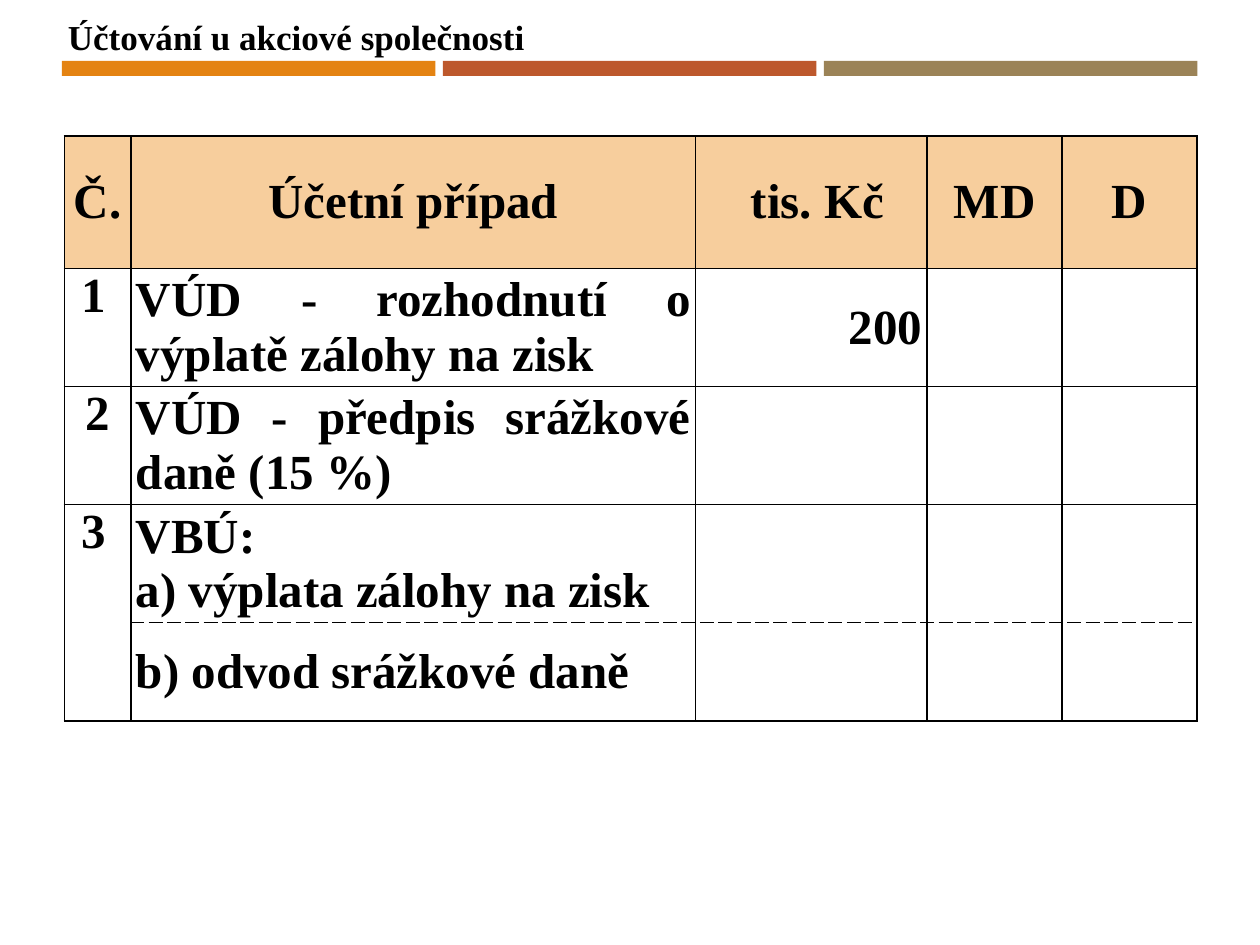
import pptx
import pptx.dml.color
import pptx.enum.shapes
import pptx.enum.text
import pptx.oxml
import pptx.oxml.ns
import pptx.util

Cm = pptx.util.Cm
Pt = pptx.util.Pt
ALIGN = pptx.enum.text.PP_ALIGN
ANCHOR = pptx.enum.text.MSO_ANCHOR

COLORS = {
    "text": "000000",
    "header": "F7CE9D",
    "orange": "E48312",
    "rust": "BD582C",
    "olive": "9B8357",
}


class Deck:
    """Style and current slide, with one method per kind of element."""

    font = "Times New Roman"

    def __init__(self, prs):
        self.s = prs.slides.add_slide(prs.slide_layouts[6])

    def rgb(self, name):
        return pptx.dml.color.RGBColor.from_string(COLORS[name])

    def run(self, p, text, size):
        r = p.add_run()
        r.text = text
        r.font.name = self.font
        r.font.size = Pt(size)
        r.font.bold = True
        r.font.color.rgb = self.rgb("text")

    def bar(self, left, top, width, height, color):
        sp = self.s.shapes.add_shape(
            pptx.enum.shapes.MSO_SHAPE.RECTANGLE, Cm(left), Cm(top), Cm(width), Cm(height))
        sp.shadow.inherit = False
        sp.fill.solid()
        sp.fill.fore_color.rgb = self.rgb(color)
        sp.line.fill.background()

    def title(self, left, top, width, height, text):
        sp = self.s.shapes.add_textbox(Cm(left), Cm(top), Cm(width), Cm(height))
        tf = sp.text_frame
        tf.word_wrap = False
        self.run(tf.paragraphs[0], text, 20)

    def table(self, left, top, cols, rows):
        sp = self.s.shapes.add_table(
            len(rows), len(cols), Cm(left), Cm(top), Cm(sum(cols)), Cm(sum(rows)))
        table = sp.table
        table.first_row = table.horz_banding = False
        for column, width in zip(table.columns, cols):
            column.width = Cm(width)
        for row, height in zip(table.rows, rows):
            row.height = Cm(height)
        return table

    def borders(self, cell, dashed):
        tcPr = cell._tc.get_or_add_tcPr()
        for side in "LRTB":
            dash = "dash" if side == dashed else "solid"
            tcPr.append(pptx.oxml.parse_xml(
                f'<a:ln{side} {pptx.oxml.ns.nsdecls("a")} w="{Pt(1)}"><a:solidFill>'
                f'<a:srgbClr val="{COLORS["text"]}"/></a:solidFill>'
                f'<a:prstDash val="{dash}"/></a:ln{side}>'))

    def cell(self, cell, lines, align, anchor, fill=None, dashed=None):
        self.borders(cell, dashed)
        if fill:
            cell.fill.solid()
            cell.fill.fore_color.rgb = self.rgb(fill)
        else:
            cell.fill.background()
        cell.margin_left = cell.margin_right = Cm(0.1)
        cell.margin_top = cell.margin_bottom = 0
        cell.vertical_anchor = anchor
        tf = cell.text_frame
        for i, line in enumerate(lines):
            p = tf.add_paragraph() if i else tf.paragraphs[0]
            p.alignment = align
            self.run(p, line, 28)


def main():
    prs = pptx.Presentation()
    prs.slide_width, prs.slide_height = Cm(25.4), Cm(19.05)
    deck = Deck(prs)

    for i, color in enumerate(("orange", "rust", "olive")):
        deck.bar(1.25 + i * 7.68, 1.23, 7.53, 0.3, color)

    entries = [
        [["Č."], ["Účetní případ"], [" tis. Kč"], ["MD"], ["D"]],
        [[" 1"], ["VÚD - rozhodnutí o výplatě zálohy na zisk"], ["200"], [], []],
        [["2"], ["VÚD - předpis srážkové daně (15 %)"], [], [], []],
        [[" 3"], ["VBÚ:", "a) výplata zálohy na zisk"], [], [], []],
        [[], ["b) odvod srážkové daně"], [], [], []],
    ]
    aligns = [ALIGN.LEFT, ALIGN.JUSTIFY, ALIGN.RIGHT, ALIGN.CENTER, ALIGN.CENTER]
    dashes = {3: "B", 4: "T"}

    table = deck.table(1.3, 2.74, [1.34, 11.38, 4.67, 2.72, 2.72],
                       [2.67, 2.38, 2.38, 2.38, 1.98])
    for i, row in enumerate(entries):
        for j, lines in enumerate(row):
            header = i == 0
            centered = header or lines == ["2"]
            deck.cell(
                table.cell(i, j), lines,
                ALIGN.CENTER if centered else aligns[j],
                ANCHOR.TOP if j == 0 and not header else ANCHOR.MIDDLE,
                "header" if header else None,
                dashes.get(i) if j else None)
    table.cell(3, 0).merge(table.cell(4, 0))

    deck.title(1.12, 0.18, 9.78, 1.12, "Účtování u akciové společnosti")
    prs.save("out.pptx")


if __name__ == "__main__":
    main()
